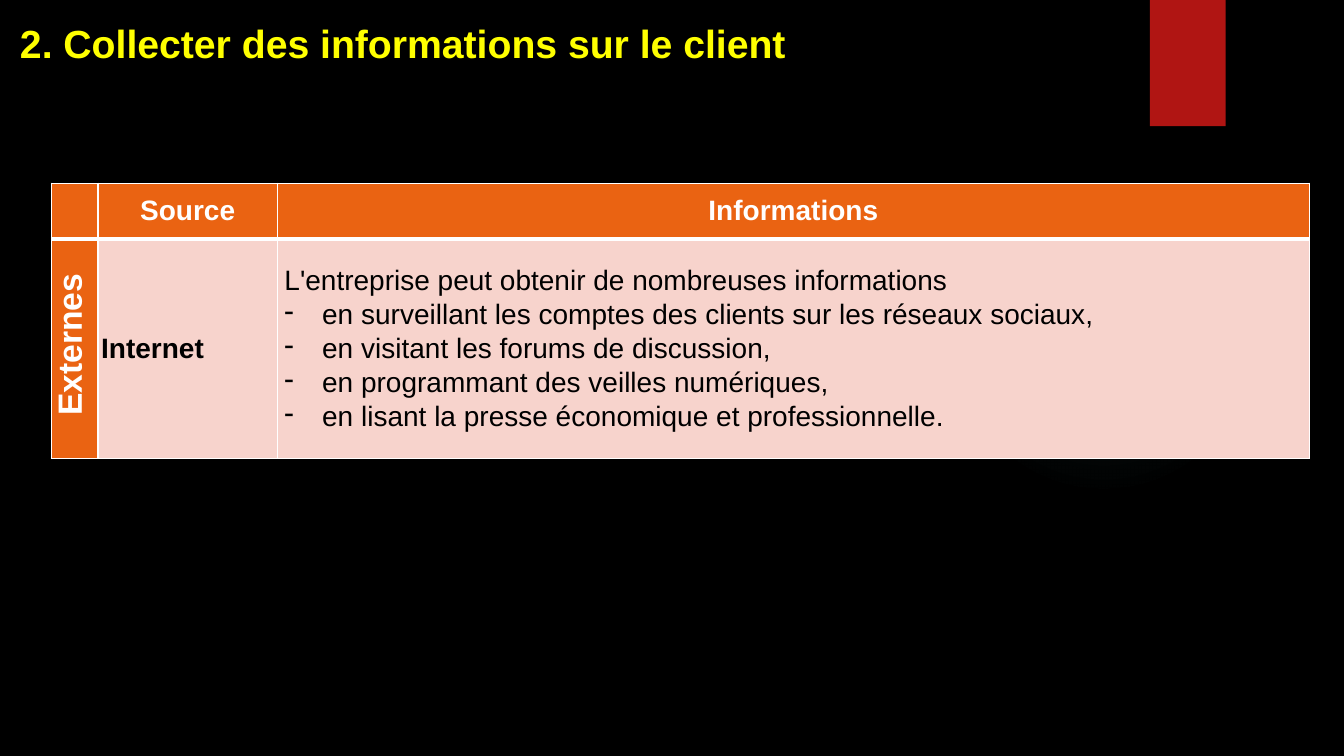
import pptx
import pptx.dml.color
import pptx.enum.shapes
import pptx.enum.text
import pptx.oxml
import pptx.oxml.ns
import pptx.util
from lxml import etree

Cm = pptx.util.Cm
Pt = pptx.util.Pt
RGBColor = pptx.dml.color.RGBColor
Align = pptx.enum.text.PP_ALIGN
Anchor = pptx.enum.text.MSO_ANCHOR
Shape = pptx.enum.shapes.MSO_SHAPE
qn = pptx.oxml.ns.qn

BLACK = RGBColor(0x00, 0x00, 0x00)
WHITE = RGBColor(0xFF, 0xFF, 0xFF)
YELLOW = RGBColor(0xFF, 0xFF, 0x00)
RED = RGBColor(0xB0, 0x15, 0x13)
ORANGE = RGBColor(0xEA, 0x63, 0x12)
PINK = RGBColor(0xF7, 0xD3, 0xCC)
TEAL = RGBColor(0x50, 0xB9, 0xC1)

FINDINGS = [
    "en surveillant les comptes des clients sur les réseaux sociaux,",
    "en visitant les forums de discussion,",
    "en programmant des veilles numériques,",
    "en lisant la presse économique et professionnelle.",
]


def write_text(paragraph, text, size=20, color=BLACK, bold=True, font="Arial",
               align=Align.LEFT, before=0, after=0, margin=0, bullet=None):
    """Add a formatted run; a bullet hangs in the left margin."""
    properties = paragraph._p.get_or_add_pPr()
    properties.set("marL", str(Cm(margin)))
    properties.set("indent", str(-Cm(margin) if bullet else 0))
    if bullet:
        etree.SubElement(properties, qn("a:buChar")).set("char", bullet)
    paragraph.alignment = align
    paragraph.space_before = Pt(before)
    paragraph.space_after = Pt(after)
    run = paragraph.add_run()
    run.text = text
    run.font.name = font
    run.font.size = Pt(size)
    run.font.bold = bold
    run.font.color.rgb = color


class SlideBuilder:
    def __init__(self, presentation):
        self.slide = presentation.slides.add_slide(presentation.slide_layouts[5])
        background = self.slide.background.fill
        background.solid()
        background.fore_color.rgb = BLACK

    def title(self, text, left, top, width, height):
        shape = self.slide.shapes.title
        shape.left, shape.top = Cm(left), Cm(top)
        shape.width, shape.height = Cm(width), Cm(height)
        frame = shape.text_frame
        frame.word_wrap = True
        frame.auto_size = pptx.enum.text.MSO_AUTO_SIZE.NONE
        frame.vertical_anchor = Anchor.TOP
        write_text(frame.paragraphs[0], text, size=28, color=YELLOW)

    def shape(self, kind, left, top, width, height, color):
        shape = self.slide.shapes.add_shape(
            kind, Cm(left), Cm(top), Cm(width), Cm(height))
        shape.shadow.inherit = False
        shape.fill.solid()
        shape.fill.fore_color.rgb = color
        shape.line.fill.background()
        return shape

    def glow(self, left, top, diameter, color, stops):
        """Draw a circle fading outwards; stops are (position, opacity) in percent."""
        shape = self.shape(Shape.OVAL, left, top, diameter, diameter, color)
        stop_xml = "".join(
            f'<a:gs pos="{position * 1000}"><a:srgbClr val="{color}">'
            f'<a:alpha val="{opacity * 1000}"/></a:srgbClr></a:gs>'
            for position, opacity in stops)
        gradient = pptx.oxml.parse_xml(
            f'<a:gradFill {pptx.oxml.ns.nsdecls("a")}><a:gsLst>{stop_xml}</a:gsLst>'
            '<a:path path="circle"><a:fillToRect l="50000" t="50000" '
            'r="50000" b="50000"/></a:path></a:gradFill>')
        properties = shape._element.spPr
        properties.replace(properties.find(qn("a:solidFill")), gradient)

    def table(self, left, top, column_widths, row_heights):
        table = self.slide.shapes.add_table(
            len(row_heights), len(column_widths), Cm(left), Cm(top),
            Cm(sum(column_widths)), Cm(sum(row_heights))).table
        for column, width in zip(table.columns, column_widths):
            column.width = Cm(width)
        for row, height in zip(table.rows, row_heights):
            row.height = Cm(height)
        return table

    def style_cell(self, cell, fill, top=1, bottom=1, margin=0.08):
        properties = cell._tc.get_or_add_tcPr()
        for side, width in (("L", 1), ("R", 1), ("T", top), ("B", bottom)):
            properties.append(pptx.oxml.parse_xml(
                f'<a:ln{side} {pptx.oxml.ns.nsdecls("a")} w="{Pt(width)}"><a:solidFill>'
                f'<a:srgbClr val="{WHITE}"/></a:solidFill></a:ln{side}>'))
        cell.fill.solid()
        cell.fill.fore_color.rgb = fill
        cell.vertical_anchor = Anchor.MIDDLE
        cell.margin_left = cell.margin_right = Cm(margin)
        cell.margin_top = cell.margin_bottom = 0


def main():
    presentation = pptx.Presentation()
    presentation.slide_width = Cm(33.87)
    presentation.slide_height = Cm(19.05)
    builder = SlideBuilder(presentation)

    builder.glow(23.9, 4.65, 7.82, TEAL, [(0, 7), (36, 6), (69, 0)])
    builder.shape(Shape.RECTANGLE, 28.98, 0, 1.91, 3.18, RED)
    builder.title("2. Collecter des informations sur le client", 0.25, 0.36, 23.06, 1.45)

    table = builder.table(1.3, 4.62, [1.17, 4.52, 26.01], [1.4, 5.54])
    for column, heading in enumerate(["", "Source", "Informations"]):
        cell = table.cell(0, column)
        builder.style_cell(cell, ORANGE, bottom=3)
        if heading:
            write_text(cell.text_frame.paragraphs[0], heading, color=WHITE,
                       align=Align.CENTER, after=3)

    category, source, details = (table.cell(1, column) for column in range(3))
    builder.style_cell(category, ORANGE, top=3)
    category._tc.get_or_add_tcPr().set("vert", "vert270")
    write_text(category.text_frame.paragraphs[0], "Externes", size=24, color=WHITE,
               align=Align.CENTER, margin=0.2)

    builder.style_cell(source, PINK, top=3)
    write_text(source.text_frame.paragraphs[0], "Internet")

    builder.style_cell(details, PINK, top=3, margin=0.18)
    write_text(details.text_frame.paragraphs[0],
               "L'entreprise peut obtenir de nombreuses informations",
               bold=False, align=Align.JUSTIFY, after=1)
    for finding in FINDINGS:
        write_text(details.text_frame.add_paragraph(), finding, bold=False,
                   align=Align.JUSTIFY, before=1, after=1, margin=0.95, bullet="-")

    presentation.save("out.pptx")


if __name__ == "__main__":
    main()
